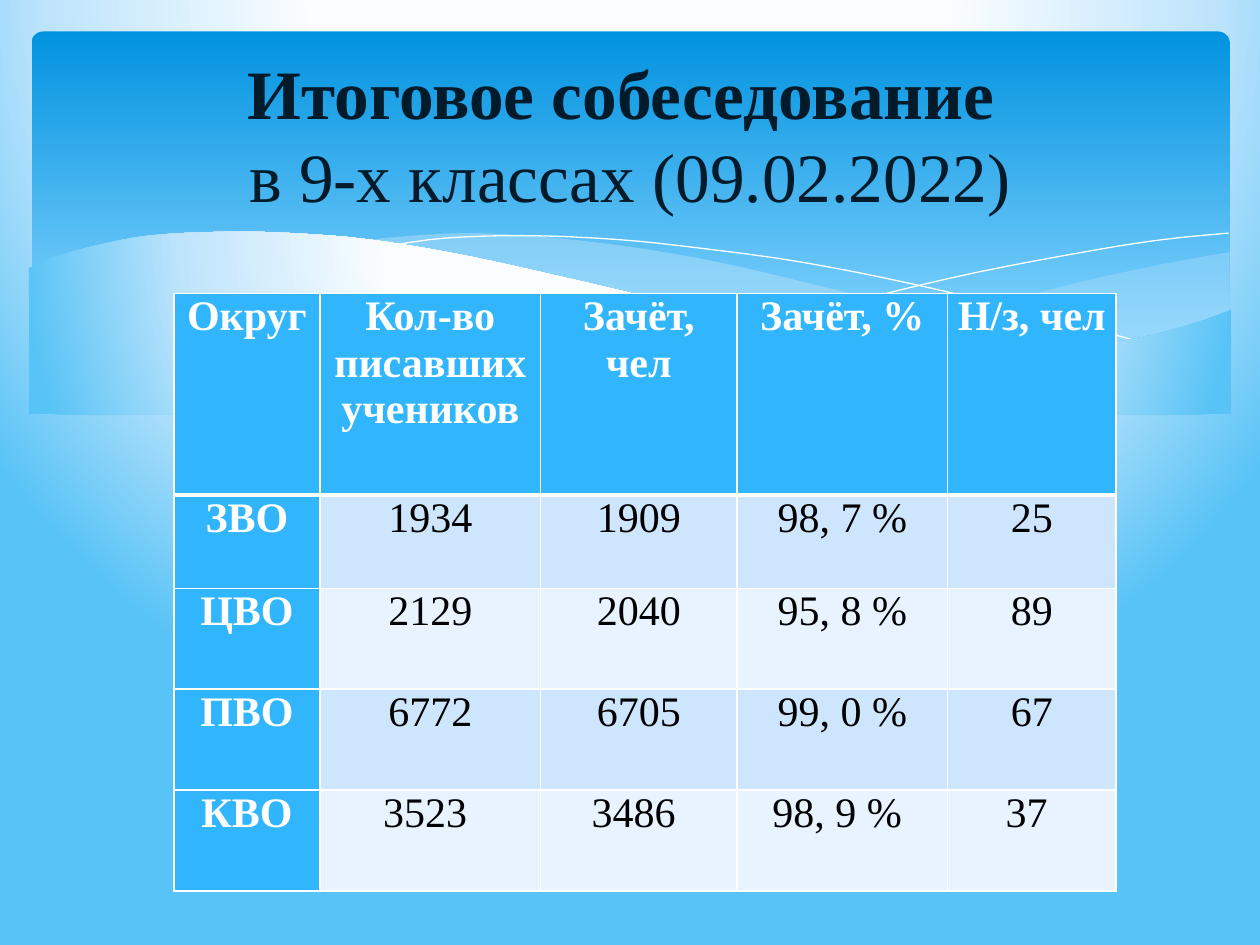
from pptx import Presentation
from pptx.dml.color import RGBColor
from pptx.enum.shapes import MSO_SHAPE
from pptx.enum.text import MSO_ANCHOR, MSO_AUTO_SIZE, PP_ALIGN
from pptx.oxml import parse_xml
from pptx.oxml.ns import nsdecls, qn
from pptx.util import Inches, Pt

FONT = "Times New Roman"
COLORS = {
    "title": "021B2B", "white": "FFFFFF", "black": "000000", "wave": "C6E7FC",
    "header": "31B6FD", "band_dark": "CEE5FE", "band_light": "E8F3FF",
}
GLOW_STOPS = [(40, "FAFDFE"), (74, "BEE4FC"), (100, "58C3F6")]
GLOW_SHAPE = ('<a:path path="circle"><a:fillToRect l="20000" t="-40000" '
              'r="20000" b="140000"/></a:path>')
BANNER_STOPS = [(0, "0293E0"), (90, "83D3FE")]
BANNER_SHAPE = '<a:lin ang="5400000" scaled="0"/>'

TITLE = [("Итоговое собеседование ", True), ("в 9-х классах (09.02.2022)", False)]
ROWS = [
    ["Округ", "Кол-во писавших учеников", "Зачёт, чел", "Зачёт, %", "Н/з, чел"],
    ["ЗВО", "1934", "1909", "98, 7 %", "25"],
    ["ЦВО", "2129", "2040", "95, 8 %", "89"],
    ["ПВО", "6772", "6705", "99, 0 %", "67"],
    ["КВО", "3523 ", "3486 ", "98, 9 % ", "37 "],
]
COL_WIDTHS = [1.16, 1.75, 1.56, 1.67, 1.34]
ROW_HEIGHTS = [1.6, 0.74, 0.8, 0.8, 0.8]

# Each wave: upper edge, lower edge, opacity in percent
WAVES = [
    ([(6.61, 2.65), (7.29, 2.53), (8.05, 2.37), (8.61, 2.23), (9.21, 2.1), (9.76, 2)],
     [(9.76, 2.47), (9.35, 2.62), (8.89, 2.72), (8.44, 2.77), (7.92, 2.77),
      (7.32, 2.74), (6.61, 2.65)], 29),
    ([(2.86, 1.91), (3.28, 1.87), (3.8, 1.85), (4.42, 1.89), (5.14, 1.98),
      (5.84, 2.11), (6.68, 2.31), (7.75, 2.54), (8.37, 2.65), (8.93, 2.73)],
     [(8.93, 2.73), (8.48, 2.77), (7.96, 2.78), (7.36, 2.75), (6.65, 2.66),
      (5.66, 2.48), (4.49, 2.22), (3.83, 2.07), (3.23, 1.96), (2.86, 1.91)], 40),
]
CREST_LINES = [
    [(3.09, 1.95), (3.53, 1.89), (4.16, 1.87), (4.89, 1.9), (5.56, 1.97),
     (6.36, 2.08), (7.27, 2.26), (8.31, 2.51), (9.07, 2.72)],
    [(6.13, 2.57), (6.95, 2.35), (7.76, 2.16), (8.66, 1.99), (9.24, 1.9), (9.75, 1.85)],
]
FRONT_EDGE = [
    (0.23, 2.13), (0.4, 2.05), (0.76, 1.95), (1.19, 1.87), (1.77, 1.84), (2.3, 1.85),
    (2.92, 1.9), (3.65, 2.02), (4.47, 2.2), (5.29, 2.39), (6.03, 2.54), (6.68, 2.65),
    (7.44, 2.74), (8.09, 2.77), (8.63, 2.74), (9.1, 2.67), (9.5, 2.56), (9.77, 2.46),
]
FRONT_BASE = [(9.77, 3.29), (0.23, 3.29)]


def rgb(name):
    return RGBColor.from_string(COLORS[name])


def set_gradient(fill, element, stops, shape_xml):
    fill.gradient()
    grad = element.find(".//" + qn("a:gradFill"))
    gs = "".join(f'<a:gs pos="{pos * 1000}"><a:srgbClr val="{color}"/></a:gs>'
                 for pos, color in stops)
    grad.getparent().replace(grad, parse_xml(
        f'<a:gradFill {nsdecls("a")} rotWithShape="1">'
        f'<a:gsLst>{gs}</a:gsLst>{shape_xml}</a:gradFill>'))


def smooth(knots, steps=4):
    """Catmull-Rom curve through the knots, as a list of points."""
    ends = [knots[0], *knots, knots[-1]]
    points = [knots[0]]
    for a, b, c, d in zip(ends, ends[1:], ends[2:], ends[3:]):
        for t in (i / steps for i in range(1, steps + 1)):
            points.append(tuple(
                0.5 * (2 * q + (r - p) * t + (2 * p - 5 * q + 4 * r - s) * t ** 2
                       + (3 * q - p - 3 * r + s) * t ** 3)
                for p, q, r, s in zip(a, b, c, d)))
    return points


def add_outline(shapes, points, close=True):
    points = [(Inches(x), Inches(y)) for x, y in points]
    builder = shapes.build_freeform(*points[0], scale=1.0)
    builder.add_line_segments(points[1:], close=close)
    sp = builder.convert_to_shape()
    sp.shadow.inherit = False
    sp.line.fill.background()
    return sp


def add_backdrop(slide):
    shapes = slide.shapes
    set_gradient(slide.background.fill, slide._element, GLOW_STOPS, GLOW_SHAPE)

    banner = shapes.add_shape(MSO_SHAPE.ROUNDED_RECTANGLE, Inches(0.25), Inches(0.25),
                              Inches(9.51), Inches(2.7))
    banner.adjustments[0] = 0.034
    banner.shadow.inherit = False
    banner.line.fill.background()
    set_gradient(banner.fill, banner._element, BANNER_STOPS, BANNER_SHAPE)

    for upper, lower, opacity in WAVES:
        wave = add_outline(shapes, smooth(upper) + smooth(lower))
        wave.fill.solid()
        wave.fill.fore_color.rgb = rgb("wave")
        wave._element.find(".//" + qn("a:srgbClr")).append(
            parse_xml(f'<a:alpha {nsdecls("a")} val="{opacity * 1000}"/>'))

    for knots in CREST_LINES:
        crest = add_outline(shapes, smooth(knots), close=False)
        crest.fill.background()
        crest.line.color.rgb = rgb("white")
        crest.line.width = Pt(0)

    front = add_outline(shapes, smooth(FRONT_EDGE) + FRONT_BASE)
    set_gradient(front.fill, front._element, GLOW_STOPS, GLOW_SHAPE)


def set_borders(cell, bottom):
    tc_pr = cell._tc.get_or_add_tcPr()
    widths = {"lnL": 1, "lnR": 1, "lnT": 1, "lnB": bottom}
    for i, (tag, width) in enumerate(widths.items()):
        tc_pr.insert(i, parse_xml(
            f'<a:{tag} {nsdecls("a")} w="{Pt(width)}"><a:solidFill>'
            f'<a:srgbClr val="{COLORS["white"]}"/></a:solidFill></a:{tag}>'))


def add_results(slide):
    table = slide.shapes.add_table(
        len(ROWS), len(COL_WIDTHS), Inches(1.38), Inches(2.33),
        Inches(sum(COL_WIDTHS)), Inches(sum(ROW_HEIGHTS))).table
    for col, width in zip(table.columns, COL_WIDTHS):
        col.width = Inches(width)
    for i, (row, height, texts) in enumerate(zip(table.rows, ROW_HEIGHTS, ROWS)):
        row.height = Inches(height)
        for j, (cell, text) in enumerate(zip(row.cells, texts)):
            heading = i == 0 or j == 0
            band = "band_dark" if i % 2 else "band_light"
            cell.text = text
            cell.margin_left = cell.margin_right = Inches(0.07)
            cell.margin_top = cell.margin_bottom = 0
            cell.fill.solid()
            cell.fill.fore_color.rgb = rgb("header" if heading else band)
            set_borders(cell, bottom=3 if i == 0 else 1)
            p = cell.text_frame.paragraphs[0]
            p.alignment = PP_ALIGN.CENTER
            p.font.name, p.font.size, p.font.bold = FONT, Pt(24), heading
            p.font.color.rgb = rgb("white" if heading else "black")


def fill_title(slide):
    title = slide.shapes.title
    title.left, title.top = Inches(0.5), Inches(0.37)
    title.width, title.height = Inches(9), Inches(1.37)
    tf = title.text_frame
    tf.auto_size = MSO_AUTO_SIZE.NONE
    tf.vertical_anchor = MSO_ANCHOR.MIDDLE
    p = tf.paragraphs[0]
    p.alignment = PP_ALIGN.CENTER
    p.font.name, p.font.size = FONT, Pt(39.6)
    p.font.color.rgb = rgb("title")
    for i, (text, bold) in enumerate(TITLE):
        if i:
            p.add_line_break()
        r = p.add_run()
        r.text, r.font.bold = text, bold
    slide.shapes._spTree.append(title._element)  # bring in front of the banner


prs = Presentation()
prs.slide_width, prs.slide_height = Inches(10), Inches(7.5)
slide = prs.slides.add_slide(prs.slide_layouts[5])
add_backdrop(slide)
add_results(slide)
fill_title(slide)
prs.save("out.pptx")
